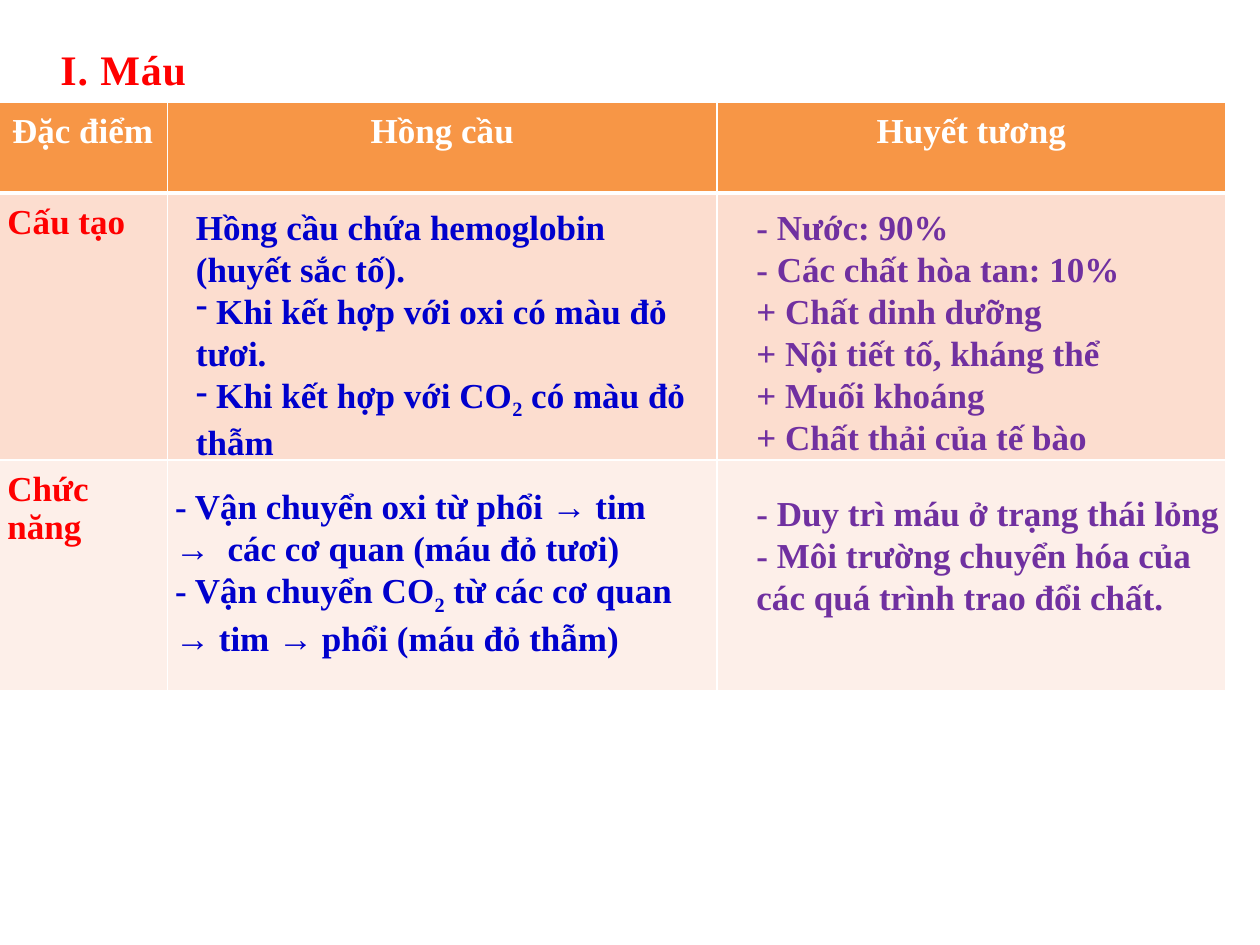
from lxml import etree
from pptx import Presentation
from pptx import util as u
from pptx.dml import color
from pptx.enum import text
from pptx.oxml import ns

RED, BLUE, PURPLE, WHITE = "FF0000", "0000CC", "7030A0", "FFFFFF"
BODY = {"name": "Times New Roman", "size": u.Pt(20), "bold": True}
TITLE = {**BODY, "size": u.Pt(24)}
BULLET = "•"  # leading mark for a paragraph with a dash bullet
SUBSCRIPT = "_"  # separates subscript runs from normal runs

COLUMNS = [3.43, 11.07, 10.26]
ROWS = [1.83, 5.38, 4.65]
ROW_FILLS = ["F79646", "FCDDCF", "FDEFE9"]
HEADERS = ["Đặc điểm", "Hồng cầu", "Huyết tương"]
FEATURES = ["Cấu tạo", "Chức năng"]

RED_CELL_STRUCTURE = [
    "Hồng cầu chứa hemoglobin (huyết sắc tố).",
    "• Khi kết hợp với oxi có màu đỏ tươi.",
    "• Khi kết hợp với CO_2_ có màu đỏ thẫm",
]
RED_CELL_FUNCTION = [
    "- Vận chuyển oxi từ phổi → tim",
    "→  các cơ quan (máu đỏ tươi)",
    "- Vận chuyển CO_2_ từ các cơ quan → tim → phổi (máu đỏ thẫm)",
]
PLASMA_STRUCTURE = [
    "- Nước: 90%",
    "- Các chất hòa tan: 10%",
    "+ Chất dinh dưỡng",
    "+ Nội tiết tố, kháng thể",
    "+ Muối khoáng",
    "+ Chất thải của tế bào",
]
PLASMA_FUNCTION = [
    "- Duy trì máu ở trạng thái lỏng",
    "- Môi trường chuyển hóa của các quá trình trao đổi chất.",
]


def rgb(hex_value):
    return color.RGBColor.from_string(hex_value)


def style_font(font, values, hex_value):
    for name, value in values.items():
        setattr(font, name, value)
    font.color.rgb = rgb(hex_value)


def add_dash_bullet(paragraph):
    properties = paragraph._p.get_or_add_pPr()
    properties.set("marL", "0")
    properties.set("indent", "0")
    etree.SubElement(properties, ns.qn("a:buChar")).set("char", "-")


def write_line(paragraph, line, values, hex_value, align):
    if line.startswith(BULLET):
        add_dash_bullet(paragraph)
        line = line[len(BULLET):]
    paragraph.alignment = align
    for index, part in enumerate(line.split(SUBSCRIPT)):
        run = paragraph.add_run()
        run.text = part
        style_font(run.font, values, hex_value)
        if index % 2:
            run._r.get_or_add_rPr().set("baseline", "-25000")


def add_note(slide, box, lines, hex_value, values=BODY,
             align=text.PP_ALIGN.LEFT, spacing=None):
    frame = slide.shapes.add_textbox(*map(u.Cm, box)).text_frame
    frame.word_wrap = True
    for index, line in enumerate(lines):
        paragraph = frame.add_paragraph() if index else frame.paragraphs[0]
        write_line(paragraph, line, values, hex_value, align)
        if spacing:
            for run in paragraph.runs:
                run._r.get_or_add_rPr().set("spc", str(spacing))


def set_borders(cell, bottom_width):
    properties = cell._tc.get_or_add_tcPr()
    widths = {"a:lnL": 1, "a:lnR": 1, "a:lnT": 1, "a:lnB": bottom_width}
    for position, (tag, width) in enumerate(widths.items()):
        line = etree.Element(ns.qn(tag), w=str(u.Pt(width)))
        fill = etree.SubElement(line, ns.qn("a:solidFill"))
        etree.SubElement(fill, ns.qn("a:srgbClr")).set("val", WHITE)
        properties.insert(position, line)


def write_cell(cell, label, hex_value, align):
    write_line(cell.text_frame.paragraphs[0], label, BODY, hex_value, align)


def add_blood_table(slide):
    area = map(u.Cm, (-0.05, 2.06, sum(COLUMNS), sum(ROWS)))
    table = slide.shapes.add_table(len(ROWS), len(COLUMNS), *area).table
    for column, width in zip(table.columns, COLUMNS):
        column.width = u.Cm(width)
    for index, (row, height) in enumerate(zip(table.rows, ROWS)):
        row.height = u.Cm(height)
        for cell in row.cells:
            for side in ("left", "right", "top", "bottom"):
                setattr(cell, f"margin_{side}", u.Cm(0.2))
            cell.fill.solid()
            cell.fill.fore_color.rgb = rgb(ROW_FILLS[index])
            set_borders(cell, 1 if index else 3)

    for column, header in enumerate(HEADERS):
        write_cell(table.cell(0, column), header, WHITE, text.PP_ALIGN.CENTER)
    for row, feature in enumerate(FEATURES, start=1):
        write_cell(table.cell(row, 0), feature, RED, text.PP_ALIGN.LEFT)


def main():
    deck = Presentation()
    deck.slide_width, deck.slide_height = u.Cm(25.4), u.Cm(19.05)
    slide = deck.slides.add_slide(deck.slide_layouts[6])

    # Comparison grid and heading
    add_blood_table(slide)
    add_note(slide, (0.97, 0.76, 3.6, 1.28), ["I. Máu"], RED, TITLE, spacing=50)

    # Red blood cells
    add_note(slide, (3.7, 4.01, 10.6, 5.38), RED_CELL_STRUCTURE, BLUE)
    add_note(slide, (3.28, 9.65, 11, 3.68), RED_CELL_FUNCTION, BLUE)

    # Plasma
    add_note(slide, (15, 4.01, 9.02, 5.38), PLASMA_STRUCTURE, PURPLE,
             align=text.PP_ALIGN.JUSTIFY)
    add_note(slide, (15, 9.78, 9.98, 2.82), PLASMA_FUNCTION, PURPLE)

    deck.save("out.pptx")


if __name__ == "__main__":
    main()
